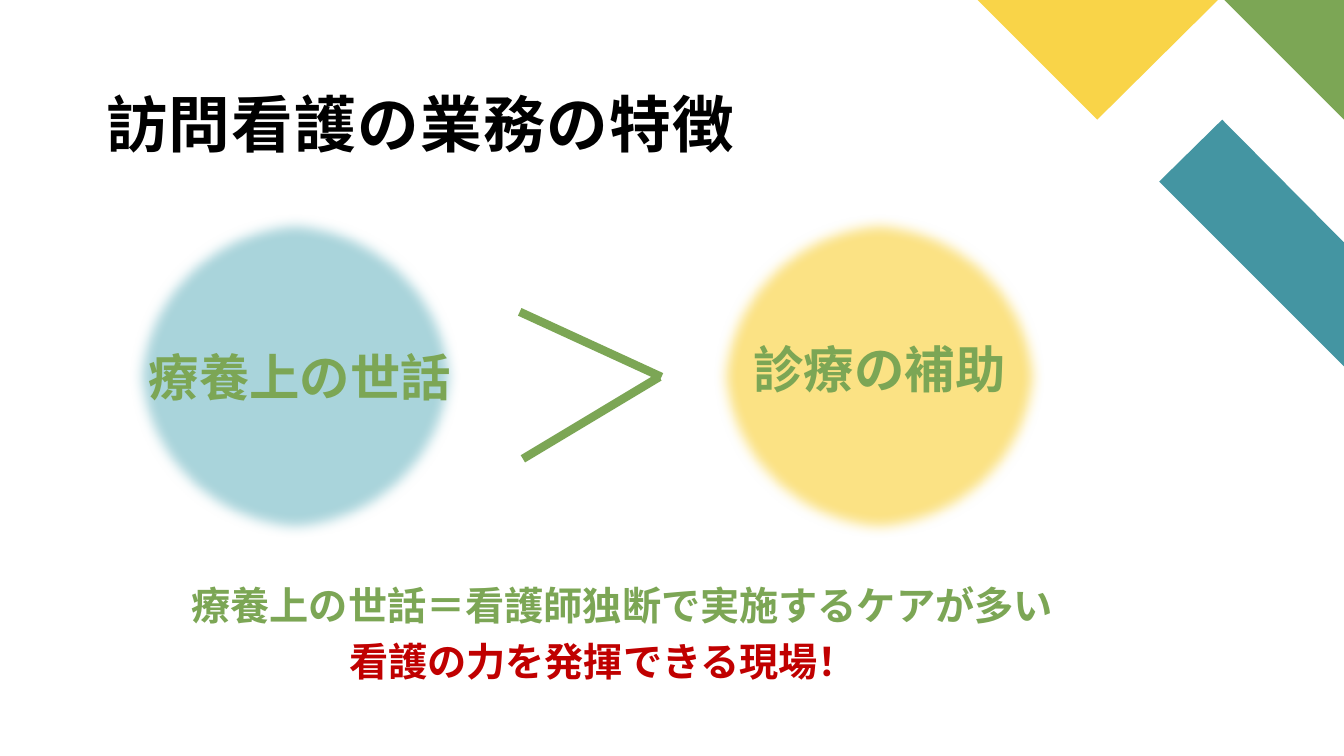
"""Build the slide on the characteristics of home-visit nursing work."""
from dataclasses import dataclass

from lxml.etree import SubElement
from pptx import Presentation
from pptx.dml.color import RGBColor
from pptx.enum.shapes import MSO_CONNECTOR, MSO_SHAPE
from pptx.enum.text import MSO_ANCHOR, MSO_AUTO_SIZE, PP_ALIGN
from pptx.oxml.ns import qn
from pptx.slide import Slide
from pptx.util import Pt

PX = 9525
FONT = "Noto Sans CJK JP"
SOFT_EDGE = 112500

TEAL = RGBColor(0x44, 0x95, 0xA2)
GREEN = RGBColor(0x7C, 0xA6, 0x55)
YELLOW = RGBColor(0xF9, 0xD4, 0x48)
PALE_YELLOW = RGBColor(0xFB, 0xE2, 0x84)
PALE_TEAL = RGBColor(0xA9, 0xD4, 0xDB)
YELLOW_LINE = RGBColor(0xBA, 0xA7, 0x62)
TEAL_LINE = RGBColor(0x7D, 0x9D, 0xA2)
BLACK = RGBColor(0, 0, 0)
RED = RGBColor(0xC0, 0, 0)

Point = tuple[int, int]
Box = tuple[int, int, int, int]


@dataclass(frozen=True)
class Polygon:
    points: tuple[Point, ...]
    fill: RGBColor


@dataclass(frozen=True)
class Circle:
    left: int
    fill: RGBColor
    line: RGBColor


@dataclass(frozen=True)
class Line:
    text: str
    size: int
    color: RGBColor
    space_before: int = 10
    indent: int = 0
    spacing: int = 0


@dataclass(frozen=True)
class TextBlock:
    box: Box
    lines: tuple[Line, ...]


POLYGONS = (
    Polygon(((1280, 349), (1280, 231), (1164, 114), (1104, 173)), TEAL),
    Polygon(((1280, 114), (1280, 0), (1166, 0)), GREEN),
    Polygon(((931, 0), (1045, 114), (1160, 0)), YELLOW),
)
CIRCLES = (
    Circle(680, PALE_YELLOW, YELLOW_LINE),
    Circle(124, PALE_TEAL, TEAL_LINE),
)
GREATER_THAN = (
    ((495, 297), (630, 359)),
    ((498, 437), (628, 359)),
)
TITLE = TextBlock((101, 89, 638, 64),
                  (Line("訪問看護の業務の特徴", 44, BLACK, space_before=0, spacing=100),))
BODIES = (
    TextBlock((132, 331, 314, 66), (Line("療養上の世話", 36, GREEN),)),
    TextBlock((708, 324, 508, 34), (Line("診療の補助", 36, GREEN),)),
)
SUMMARY = TextBlock((173, 554, 1070, 109), (
    Line("療養上の世話＝看護師独断で実施するケアが多い", 28, GREEN),
    Line("看護の力を発揮できる現場！", 28, RED, indent=150),
))


def apply_format(target: object, values: dict[str, object]) -> None:
    for name, value in values.items():
        setattr(target, name, value)


def draw_polygon(slide: Slide, polygon: Polygon) -> None:
    start, *rest = polygon.points
    builder = slide.shapes.build_freeform(*start, scale=PX)
    builder.add_line_segments(rest, close=True)
    shape = builder.convert_to_shape()
    shape.shadow.inherit = False
    shape.fill.solid()
    shape.fill.fore_color.rgb = polygon.fill
    shape.line.fill.background()


def draw_circle(slide: Slide, circle: Circle) -> None:
    shape = slide.shapes.add_shape(
        MSO_SHAPE.OVAL, *(value * PX for value in (circle.left, 204, 314, 307)))
    shape.shadow.inherit = False
    shape.fill.solid()
    shape.fill.fore_color.rgb = circle.fill
    shape.line.color.rgb = circle.line
    shape.line.width = Pt(1)
    effects = shape.element.spPr.find(qn("a:effectLst"))
    SubElement(effects, qn("a:softEdge"), rad=str(SOFT_EDGE))


def draw_stroke(slide: Slide, start: Point, end: Point) -> None:
    connector = slide.shapes.add_connector(
        MSO_CONNECTOR.STRAIGHT, *(value * PX for value in start + end))
    connector.line.color.rgb = GREEN
    connector.line.width = Pt(6)
    SubElement(connector.element.spPr, qn("a:effectLst"))


def write_text(shape: object, block: TextBlock, frame_format: dict[str, object]) -> None:
    names = ("left", "top", "width", "height")
    apply_format(shape, {name: value * PX for name, value in zip(names, block.box)})
    frame = shape.text_frame
    apply_format(frame, {"word_wrap": True, "auto_size": MSO_AUTO_SIZE.NONE} | frame_format)
    for index, line in enumerate(block.lines):
        paragraph = frame.add_paragraph() if index else frame.paragraphs[0]
        apply_format(paragraph, {"alignment": PP_ALIGN.LEFT, "line_spacing": 0.9,
                                 "space_before": Pt(line.space_before)})
        properties = paragraph._p.get_or_add_pPr()
        properties.set("marL", str(line.indent * PX))
        properties.set("indent", "0")
        SubElement(properties, qn("a:buNone"))
        run = paragraph.add_run()
        run.text = line.text
        apply_format(run.font, {"name": FONT, "size": Pt(line.size), "bold": True})
        run.font.color.rgb = line.color
        run_properties = run._r.get_or_add_rPr()
        run_properties.set("spc", str(line.spacing))
        SubElement(run_properties, qn("a:ea"), typeface=FONT)


def main() -> None:
    presentation = Presentation()
    apply_format(presentation, {"slide_width": 1280 * PX, "slide_height": 720 * PX})
    slide = presentation.slides.add_slide(presentation.slide_layouts[3])
    title, *bodies = list(slide.placeholders)

    for polygon in POLYGONS:
        draw_polygon(slide, polygon)
    for circle in CIRCLES:
        draw_circle(slide, circle)

    margins = ("margin_left", "margin_top", "margin_right", "margin_bottom")
    write_text(title, TITLE,
               dict.fromkeys(margins, 0) | {"vertical_anchor": MSO_ANCHOR.BOTTOM})
    for body, block in zip(bodies, BODIES):
        write_text(body, block, {"vertical_anchor": MSO_ANCHOR.TOP})
    for placeholder in (title, *bodies):
        slide.shapes.element.append(placeholder.element)

    for start, end in GREATER_THAN:
        draw_stroke(slide, start, end)
    summary = slide.shapes.add_textbox(0, 0, PX, PX)
    write_text(summary, SUMMARY, {"vertical_anchor": MSO_ANCHOR.TOP})

    presentation.save("out.pptx")


if __name__ == "__main__":
    main()
